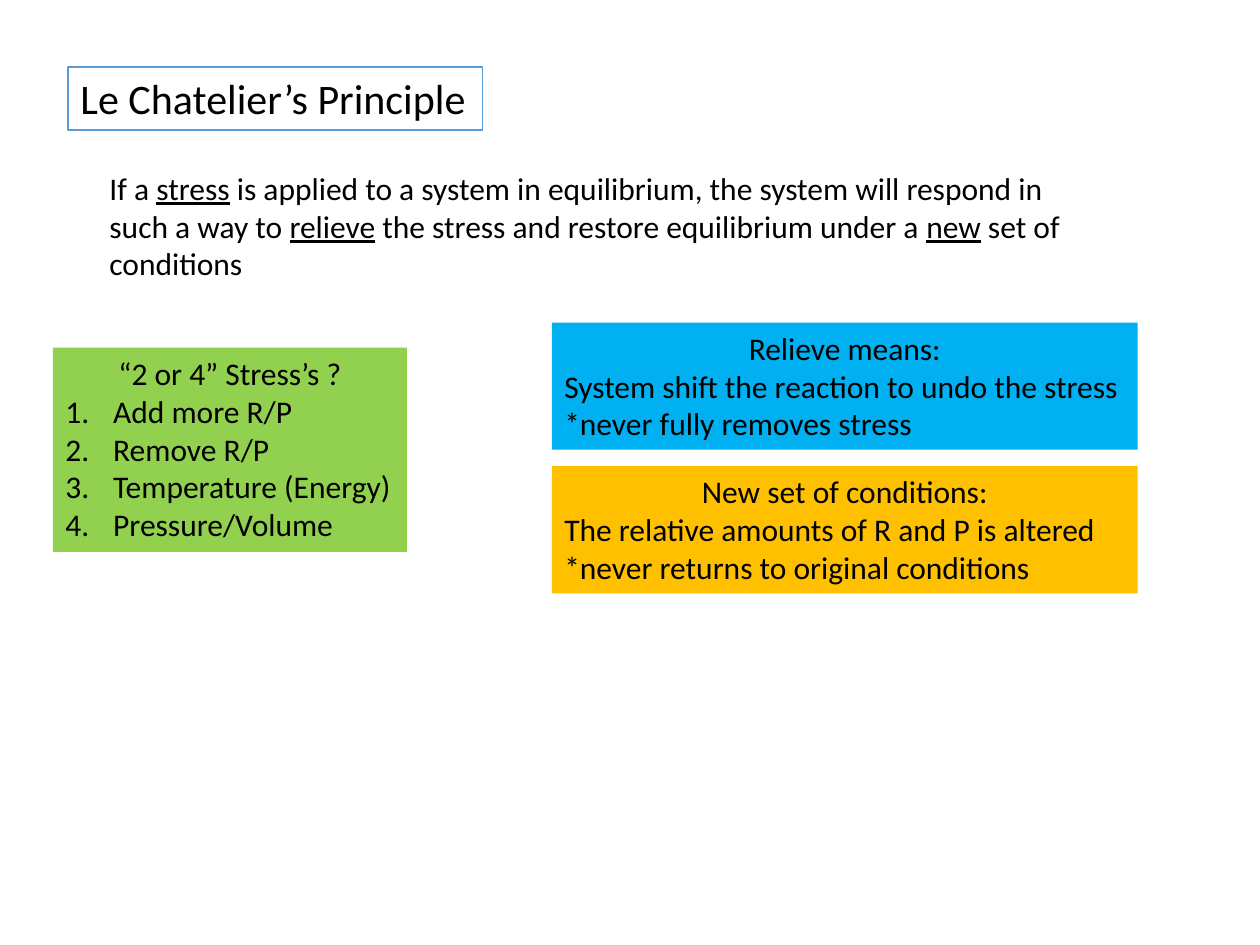
"""Build a slide on Le Chatelier's Principle."""
from dataclasses import dataclass

from lxml import etree
from pptx import Presentation
from pptx import util as u
from pptx.dml.color import RGBColor
from pptx.enum import shapes, text
from pptx.oxml.ns import qn


@dataclass(frozen=True)
class Theme:
    """Colours, font and type sizes."""
    font: str = "Calibri"
    head: int = 24
    body: int = 18
    ink: str = "000000"
    paper: str = "FFFFFF"
    edge: str = "5B9BD5"
    green: str = "92D050"
    blue: str = "00B0F0"
    gold: str = "FFC000"


THEME = Theme()


def style(frame, size):
    """Format every run of a text frame."""
    for para in frame.paragraphs:
        for run in para.runs:
            run.font.name = THEME.font
            run.font.size = u.Pt(size)
            run.font.color.rgb = RGBColor.from_string(THEME.ink)


def panel(slide, box, fill, lines, size=THEME.body, edge=None, wrap=False):
    """Place a filled rectangle of left-aligned lines and return its frame."""
    shape = slide.shapes.add_shape(
        shapes.MSO_SHAPE.RECTANGLE, *map(u.Inches, box))
    shape.shadow.inherit = False
    shape.fill.solid()
    shape.fill.fore_color.rgb = RGBColor.from_string(fill)
    if edge:
        shape.line.color.rgb = RGBColor.from_string(edge)
        shape.line.width = u.Pt(1)
    else:
        shape.line.fill.background()
    frame = shape.text_frame
    frame.text = "\n".join(lines)
    frame.word_wrap = wrap
    frame.auto_size = text.MSO_AUTO_SIZE.SHAPE_TO_FIT_TEXT
    frame.vertical_anchor = text.MSO_ANCHOR.TOP
    for para in frame.paragraphs:
        para.alignment = text.PP_ALIGN.LEFT
    style(frame, size)
    return frame


def title(slide, box, words):
    """Place the outlined title."""
    panel(slide, box, THEME.paper, [words], THEME.head, THEME.edge)


def law(slide, box, parts):
    """Place the statement, with every second part underlined."""
    frame = slide.shapes.add_textbox(*map(u.Inches, box)).text_frame
    frame.word_wrap = True
    frame.auto_size = text.MSO_AUTO_SIZE.SHAPE_TO_FIT_TEXT
    for index, part in enumerate(parts):
        run = frame.paragraphs[0].add_run()
        run.text = part
        run.font.underline = index % 2 == 1
    style(frame, THEME.body)


def card(slide, box, fill, head, lines, wrap=False):
    """Place a panel with a centred heading and return its other paragraphs."""
    frame = panel(slide, box, fill, [head, *lines], wrap=wrap)
    frame.paragraphs[0].alignment = text.PP_ALIGN.CENTER
    return frame.paragraphs[1:]


def steps(slide, box, fill, head, lines):
    """Place a card whose lines are numbered."""
    indent = u.Inches(0.38)
    for para in card(slide, box, fill, head, lines):
        props = para._p.get_or_add_pPr()
        props.set("marL", str(indent))
        props.set("indent", str(-indent))
        etree.SubElement(props, qn("a:buFont"), typeface="+mj-lt")
        etree.SubElement(props, qn("a:buAutoNum"), type="arabicPeriod")


def main():
    """Build and save the slide."""
    deck = Presentation()
    deck.slide_width, deck.slide_height = u.Inches(10), u.Inches(7.5)
    slide = deck.slides.add_slide(deck.slide_layouts[6])
    title(slide, (0.54, 0.53, 3.29, 0.5), "Le Chatelier’s Principle")
    law(slide, (0.77, 1.29, 8.02, 1.01), [
        "If a ", "stress",
        " is applied to a system in equilibrium, the system will respond in "
        "such a way to ", "relieve",
        " the stress and restore equilibrium under a ", "new",
        " set of conditions"])
    steps(slide, (0.42, 2.76, 2.81, 1.62), THEME.green, "“2 or 4” Stress’s ?",
          ["Add more R/P", "Remove R/P", "Temperature (Energy)",
           "Pressure/Volume"])
    card(slide, (4.38, 2.56, 4.65, 1.01), THEME.blue, "Relieve means:",
         ["System shift the reaction to undo the stress",
          "*never fully removes stress"])
    card(slide, (4.38, 3.7, 4.65, 1.01), THEME.gold, "New set of conditions:",
         ["The relative amounts of R and P is altered",
          "*never returns to original conditions"], wrap=True)
    deck.save("out.pptx")


if __name__ == "__main__":
    main()
